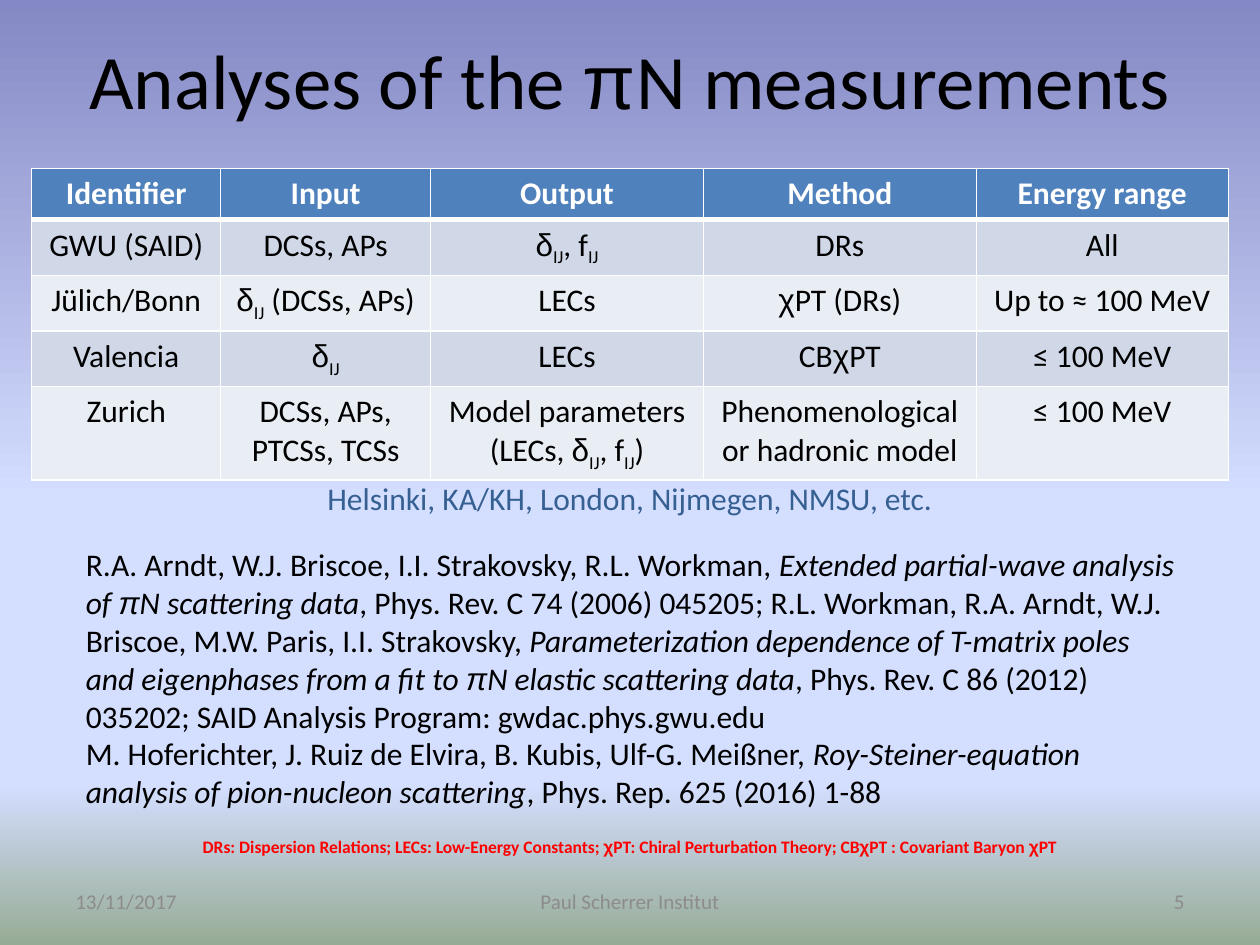
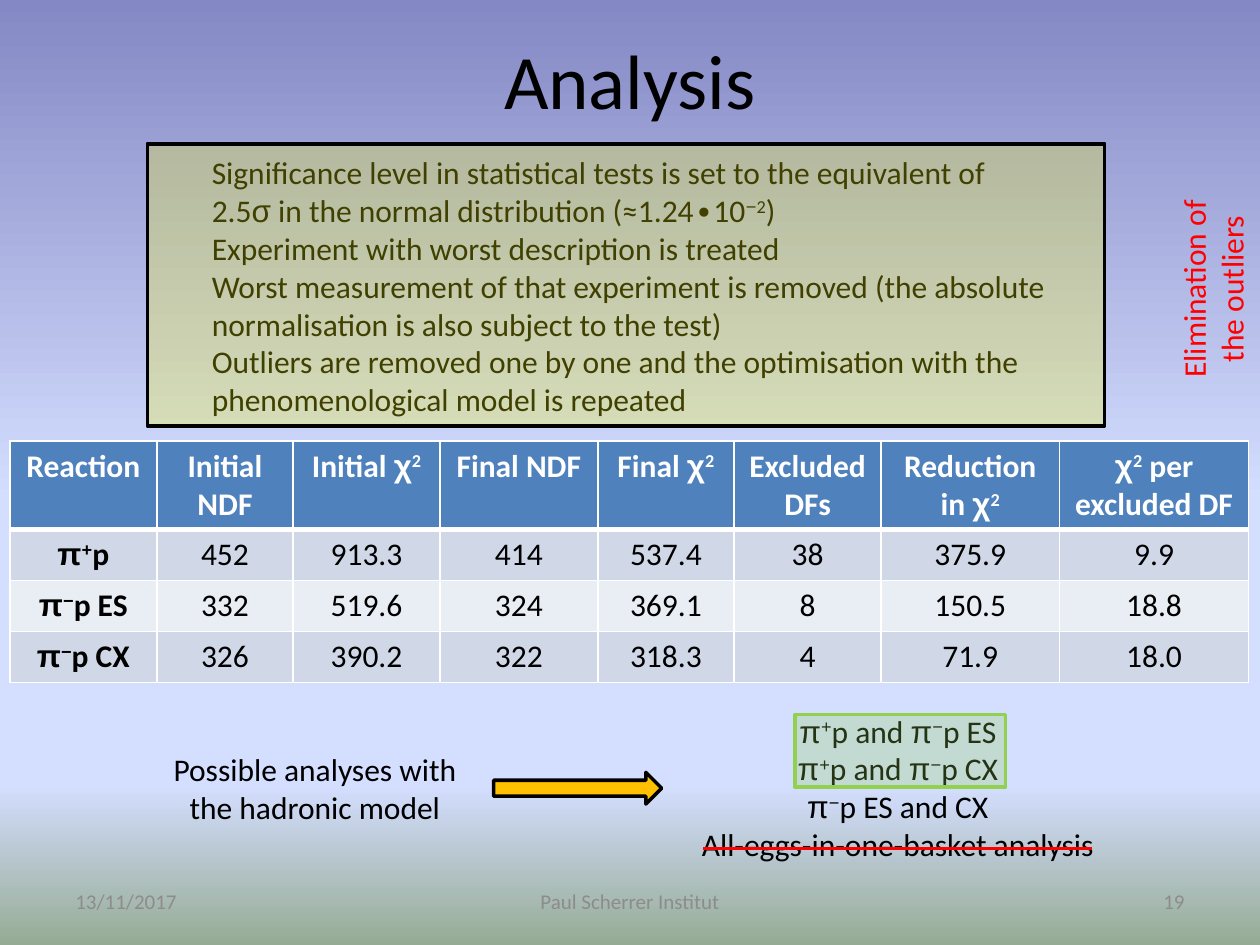
from itertools import groupby

from lxml.etree import SubElement
from pptx import Presentation
from pptx.dml.color import RGBColor
from pptx.enum.shapes import MSO_CONNECTOR, MSO_SHAPE
from pptx.enum.text import MSO_ANCHOR as ANCHOR, PP_ALIGN as ALIGN
from pptx.oxml.ns import qn
from pptx.util import Cm, Pt

BLACK = RGBColor(0x00, 0x00, 0x00)
WHITE = RGBColor(0xFF, 0xFF, 0xFF)
GREY = RGBColor(0x8C, 0x8C, 0x8C)
RED = RGBColor(0xFF, 0x00, 0x00)
NAVY = RGBColor(0x37, 0x60, 0x92)
ORANGE = RGBColor(0xFF, 0xC0, 0x00)
YELLOW = RGBColor(0xFF, 0xFF, 0x00)
GREEN = RGBColor(0x92, 0xD0, 0x50)
HEADER = RGBColor(0x4F, 0x81, 0xBD)
BANDS = [RGBColor(0xE9, 0xED, 0xF4), RGBColor(0xD0, 0xD8, 0xE8)]
SKY = [(0, RGBColor(0x84, 0x88, 0xC4)), (53, RGBColor(0xD4, 0xDE, 0xFF)),
       (83, RGBColor(0xD4, 0xDE, 0xFF)), (100, RGBColor(0x96, 0xAB, 0x94))]
ARIAL_CHARS = "πδχσ+−"
BASELINES = {"^": "30000", "_": "-25000"}


def add_runs(p, text, size=18, color=BLACK, bold=False, align=ALIGN.CENTER):
    # "|" parts runs; a leading ^, _ or / means superscript, subscript or italic
    p.alignment = align
    for part in text.split("|"):
        mark = part[0] if part[0] in "^_/" else ""
        for is_arial, chars in groupby(part[len(mark):], lambda c: c in ARIAL_CHARS):
            r = p.add_run()
            r.text = "".join(chars)
            r.font.name = "Arial" if is_arial else "Calibri"
            r.font.size = Pt(size)
            r.font.color.rgb = color
            r.font.bold = bold
            r.font.italic = mark == "/"
            if mark in BASELINES:
                r.font._element.set("baseline", BASELINES[mark])


def add_box(s, x, y, w, h, lines, anchor=ANCHOR.TOP, **style):
    sp = s.shapes.add_textbox(Cm(x), Cm(y), Cm(w), Cm(h))
    tf = sp.text_frame
    tf.word_wrap = True
    tf.vertical_anchor = anchor
    for i, line in enumerate(lines):
        p = tf.add_paragraph() if i else tf.paragraphs[0]
        add_runs(p, line, **style)
    return sp


prs = Presentation()
prs.slide_width, prs.slide_height = Cm(25.4), Cm(19.05)

fill = prs.slide_master.background.fill
fill.gradient()
fill.gradient_angle = 270
stops = prs.slide_master.element.find(".//" + qn("p:bg")).find(".//" + qn("a:gsLst"))
for stop in list(stops):
    stops.remove(stop)
for pos, color in SKY:
    stop = SubElement(stops, qn("a:gs"), pos=str(pos * 1000))
    SubElement(stop, qn("a:srgbClr"), val=str(color))

analyses = [
    ["Identifier", "Input", "Output", "Method", "Energy range"],
    ["GWU (SAID)", "DCSs, APs", "δ|_IJ|, f|_IJ", "DRs", "All"],
    ["Jülich/Bonn", "δ|_IJ| (DCSs, APs)", "LECs", "χPT (DRs)", "Up to ≈ 100 MeV"],
    ["Valencia", "δ|_IJ", "LECs", "CBχPT", "≤ 100 MeV"],
    ["Zurich", "DCSs, APs, PTCSs, TCSs", "Model parameters (LECs, δ|_IJ|, f|_IJ|)",
     "Phenomenological or hadronic model", "≤ 100 MeV"],
]
outliers = [
    ["Reaction", "Initial NDF", "Initial χ|^2", "Final NDF", "Final χ|^2",
     "Excluded DFs", "Reduction in χ|^2", "χ|^2| per excluded DF"],
    ["π|^+|p", "452", "913.3", "414", "537.4", "38", "375.9", "9.9"],
    ["π|^−|p ES", "332", "519.6", "324", "369.1", "8", "150.5", "18.8"],
    ["π|^−|p CX", "326", "390.2", "322", "318.3", "4", "71.9", "18.0"],
]
pages = [
    ("Analyses of the πN measurements", "5", analyses, 0.64, 3.4,
     [3.81, 4.23, 5.5, 5.5, 5.08], False),
    ("Analysis", "19", outliers, 0.2, 8.89,
     [2.96, 2.75, 2.96, 3.18, 2.75, 2.96, 3.6, 3.81], True),
]

for title, number, rows, left, top, widths, bold_first in pages:
    s = prs.slides.add_slide(prs.slide_layouts[5])
    sp = s.shapes.title
    sp.left, sp.top, sp.width, sp.height = Cm(1.27), Cm(0), Cm(22.86), Cm(3.18)
    sp.text_frame.vertical_anchor = ANCHOR.MIDDLE
    add_runs(sp.text_frame.paragraphs[0], title, size=44)

    for x, w, text, align in [(1.27, 5.92, "13/11/2017", ALIGN.LEFT),
                              (8.68, 8.04, "Paul Scherrer Institut", ALIGN.CENTER),
                              (18.21, 5.92, number, ALIGN.RIGHT)]:
        add_box(s, x, 17.65, w, 1.02, [text], ANCHOR.MIDDLE,
                size=12, color=GREY, align=align)

    row_height = 1.03
    table = s.shapes.add_table(len(rows), len(widths), Cm(left), Cm(top),
                               Cm(sum(widths)), Cm(row_height * len(rows))).table
    table.horz_banding = False
    for col, w in zip(table.columns, widths):
        col.width = Cm(w)
    for i, row in enumerate(rows):
        table.rows[i].height = Cm(row_height)
        for j, text in enumerate(row):
            cell = table.cell(i, j)
            tcPr = cell._tc.get_or_add_tcPr()
            for side in "LRB" if i else "LRTB":
                points = 3 if i == 0 and side == "B" else 1
                ln = SubElement(tcPr, qn("a:ln" + side), w=str(Pt(points)))
                SubElement(SubElement(ln, qn("a:solidFill")), qn("a:srgbClr"),
                           val=str(WHITE))
            cell.fill.solid()
            cell.fill.fore_color.rgb = BANDS[i % 2] if i else HEADER
            add_runs(cell.text_frame.paragraphs[0], text,
                     color=BLACK if i else WHITE,
                     bold=i == 0 or (bold_first and j == 0))

s = prs.slides[0]
add_box(s, 1.48, 10.87, 22.65, 5.64, [
    "R.A. Arndt, W.J. Briscoe, I.I. Strakovsky, R.L. Workman, "
    "|/Extended partial-wave analysis of πN scattering data"
    "|, Phys. Rev. C 74 (2006) 045205; R.L. Workman, R.A. Arndt, W.J. Briscoe, "
    "M.W. Paris, I.I. Strakovsky, "
    "|/Parameterization dependence of T-matrix poles and eigenphases "
    "from a fit to πN elastic scattering data"
    "|, Phys. Rev. C 86 (2012) 035202; SAID Analysis Program: gwdac.phys.gwu.edu",
    "M. Hoferichter, J. Ruiz de Elvira, B. Kubis, Ulf-G. Meißner, "
    "|/Roy-Steiner-equation analysis of pion-nucleon scattering"
    "|, Phys. Rep. 625 (2016) 1-88",
], align=ALIGN.LEFT)
add_box(s, 0.42, 16.72, 24.55, 0.68, [
    "DRs: Dispersion Relations; LECs: Low-Energy Constants; "
    "χPT: Chiral Perturbation Theory; CBχPT : Covariant Baryon χPT",
], size=10, color=RED, bold=True)
add_box(s, 6.14, 9.53, 13.12, 1.03,
        ["Helsinki, KA/KH, London, Nijmegen, NMSU, etc."], color=NAVY)

s = prs.slides[1]
add_box(s, 4.02, 2.97, 17.36, 5.64, [
    "Significance level in statistical tests is set to the equivalent of "
    "2.5σ in the normal distribution (≈1.24∙10|^−2|)",
    "Experiment with worst description is treated",
    "Worst measurement of that experiment is removed "
    "(the absolute normalisation is also subject to the test)",
    "Outliers are removed one by one and the optimisation with the "
    "phenomenological model is repeated",
], align=ALIGN.LEFT)
add_box(s, 13.34, 14.22, 9.52, 3.33, [
    "π|^+|p and π|^−|p ES",
    "π|^+|p and π|^−|p CX",
    "π|^−|p ES and CX",
    "All-eggs-in-one-basket analysis",
])
add_box(s, 2.75, 14.99, 7.2, 1.79, ["Possible analyses with the hadronic model"])

strike = s.shapes.add_connector(MSO_CONNECTOR.STRAIGHT,
                                Cm(22.01), Cm(17.1), Cm(14.18), Cm(17.1))
strike.line.color.rgb = RED
strike.line.width = Pt(2)
SubElement(strike._element.spPr, qn("a:effectLst"))

for kind, x, y, w, h, color, outline, opacity in [
    (MSO_SHAPE.RIGHT_ARROW, 9.95, 15.57, 3.39, 0.64, ORANGE, BLACK, 100),
    (MSO_SHAPE.RECTANGLE, 16.03, 14.4, 4.24, 1.47, GREEN, GREEN, 25),
    (MSO_SHAPE.RECTANGLE, 2.97, 2.9, 19.3, 5.69, YELLOW, BLACK, 25),
]:
    sp = s.shapes.add_shape(kind, Cm(x), Cm(y), Cm(w), Cm(h))
    sp.shadow.inherit = False
    sp.fill.solid()
    sp.fill.fore_color.rgb = color
    sp.line.color.rgb = outline
    sp.line.width = Pt(2)
    if opacity < 100:
        rgb = sp._element.spPr.find(qn("a:solidFill")).find(qn("a:srgbClr"))
        SubElement(rgb, qn("a:alpha"), val=str(opacity * 1000))

sp = add_box(s, 22.01, 4.93, 4.87, 1.79, ["Elimination of the outliers"], color=RED)
sp.rotation = 270

prs.save("out.pptx")
